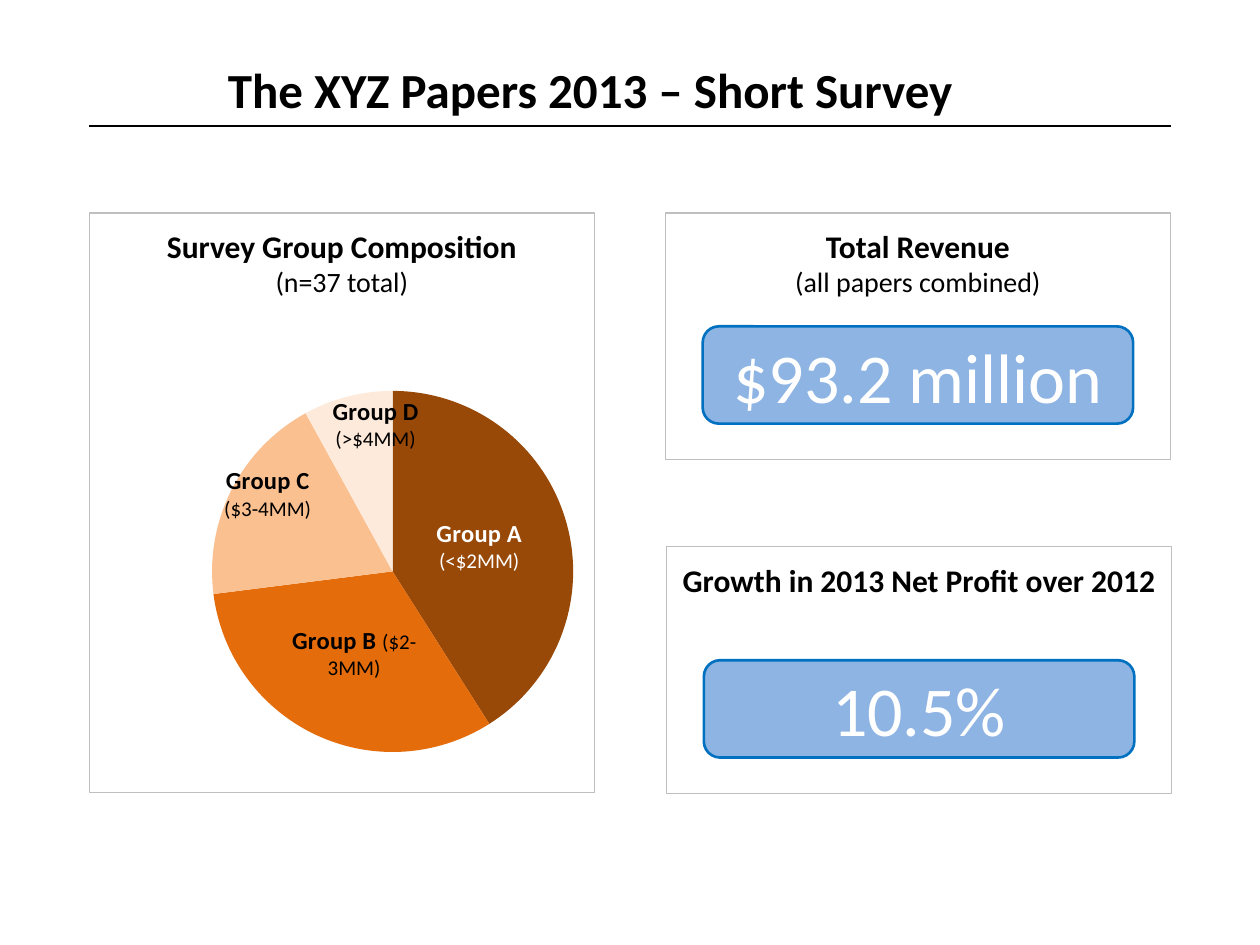
from dataclasses import dataclass

import lxml.etree
import pptx
import pptx.chart.data
import pptx.dml.color
import pptx.enum.chart
import pptx.enum.shapes
import pptx.enum.text
import pptx.oxml
import pptx.oxml.ns
import pptx.util

Pt = pptx.util.Pt
ALIGN = pptx.enum.text.PP_ALIGN
ANCHOR = pptx.enum.text.MSO_ANCHOR
SHAPE = pptx.enum.shapes.MSO_SHAPE

FONT = "Calibri"
COLORS = {
    "text": "000000", "light": "FFFFFF", "border": "BFBFBF",
    "figure": "8EB4E3", "figure_line": "0070C0",
    "a": "984807", "b": "E46C0A", "c": "FAC090", "d": "FDEADA",
}
PANEL_W = 288.7


@dataclass
class Panel:
    left: float
    top: float
    height: float
    heading: str
    note: str = ""
    figure: str = ""
    heading_w: float = 228


@dataclass
class Slice:
    group: str
    revenue: str
    value: int
    fill: str
    font: str = "text"
    shift: tuple[float, float] | None = None  # fractions of the chart size
    two_lines: bool = True


PANELS = [
    Panel(51, 121.7, 331.2, "Survey Group Composition", "(n=37 total)"),
    Panel(380.2, 121.7, 141.1, "Total Revenue", "(all papers combined)", "$93.2 million"),
    Panel(380.9, 312.5, 141.1, "Growth in 2013 Net Profit over 2012",
          figure="10.5%", heading_w=288),
]
SLICES = [
    Slice("Group A", "(<$2MM)", 41, "a", font="light"),
    Slice("Group B", "($2-3MM)", 32, "b", two_lines=False),
    Slice("Group C", "($3-4MM)", 19, "c", shift=(-0.08, -0.08)),
    Slice("Group D", "(>$4MM)", 8, "d", shift=(0.01, -0.13)),
]


def rgb(name: str) -> pptx.dml.color.RGBColor:
    return pptx.dml.color.RGBColor.from_string(COLORS[name])


def add_text(p, text: str, *, size: float, color: str = "text",
             bold: bool = False, align=None) -> None:
    r = p.add_run()
    r.text = text
    r.font.name, r.font.size, r.font.bold = FONT, Pt(size), bold
    r.font.color.rgb = rgb(color)
    if align is not None:
        p.alignment = align


def add_box(s, kind, left: float, top: float, width: float, height: float,
            line: str, weight: float, fill: str | None = None):
    sp = s.shapes.add_shape(kind, Pt(left), Pt(top), Pt(width), Pt(height))
    sp.shadow.inherit = False
    sp.line.color.rgb = rgb(line)
    sp.line.width = Pt(weight)
    if fill:
        sp.fill.solid()
        sp.fill.fore_color.rgb = rgb(fill)
    else:
        sp.fill.background()
    return sp


def manual_layout(**values) -> lxml.etree._Element:
    """Chart layout element; values are given in schema order."""
    layout = pptx.oxml.parse_xml(
        f"<c:layout {pptx.oxml.ns.nsdecls('c')}><c:manualLayout/></c:layout>")
    for tag, value in values.items():
        lxml.etree.SubElement(layout[0], pptx.oxml.ns.qn(f"c:{tag}")).set("val", str(value))
    return layout


def add_title(s, text: str) -> None:
    sp = s.shapes.title
    sp.left, sp.top, sp.width, sp.height = Pt(123), Pt(30.2), Pt(533), Pt(41.8)
    sp.text_frame.vertical_anchor = ANCHOR.MIDDLE
    add_text(sp.text_frame.paragraphs[0], text, size=28, bold=True, align=ALIGN.LEFT)
    rule = s.shapes.add_connector(
        pptx.enum.shapes.MSO_CONNECTOR.STRAIGHT, Pt(50.8), Pt(72), Pt(669.3), Pt(72))
    rule.line.color.rgb = rgb("text")
    rule.line.width = Pt(0.75)
    lxml.etree.SubElement(rule._element.spPr, pptx.oxml.ns.qn("a:effectLst"))


def add_panel(s, panel: Panel) -> None:
    center = panel.left + PANEL_W / 2
    heading = s.shapes.add_textbox(Pt(center - panel.heading_w / 2), Pt(panel.top + 4.3),
                                   Pt(panel.heading_w), Pt(48.5))
    tf = heading.text_frame
    tf.word_wrap = True
    add_text(tf.paragraphs[0], panel.heading, size=18, bold=True, align=ALIGN.CENTER)
    if panel.note:
        add_text(tf.add_paragraph(), panel.note, size=16, align=ALIGN.CENTER)
    add_box(s, SHAPE.RECTANGLE, panel.left, panel.top, PANEL_W, panel.height, "border", 0.75)
    if panel.figure:
        sp = add_box(s, SHAPE.ROUNDED_RECTANGLE, center - 123, panel.top + 64.8, 246, 55.6,
                     "figure_line", 1.5, "figure")
        sp.text_frame.vertical_anchor = ANCHOR.MIDDLE
        add_text(sp.text_frame.paragraphs[0], panel.figure, size=40, color="light",
                 align=ALIGN.CENTER)


def add_label(point, part: Slice) -> None:
    label = point.data_label
    p = label.text_frame.paragraphs[0]
    add_text(p, part.group if part.two_lines else part.group + " ",
             size=14, color=part.font, bold=True)
    if part.two_lines:
        p = label.text_frame.add_paragraph()
    add_text(p, part.revenue, size=12, color=part.font)
    label.position = pptx.enum.chart.XL_LABEL_POSITION.CENTER
    if part.shift:
        x, y = part.shift
        rich = label.text_frame._txBody
        rich.getparent().addprevious(manual_layout(x=x, y=y))


def add_pie(s) -> None:
    data = pptx.chart.data.CategoryChartData()
    data.categories = [f"{part.group} {part.revenue}" for part in SLICES]
    data.add_series("Series 1", [part.value for part in SLICES])
    chart = s.shapes.add_chart(pptx.enum.chart.XL_CHART_TYPE.PIE, Pt(41.8), Pt(178.6),
                               Pt(317.5), Pt(262), data).chart
    chart.has_legend = chart.has_title = False
    chart.font.name, chart.font.size = FONT, Pt(18)
    chart.font.color.rgb = rgb("text")
    plot = chart.plots[0]
    plot.vary_by_categories = True
    area = chart._chartSpace.chart.plotArea
    for old in area.findall(pptx.oxml.ns.qn("c:layout")):
        area.remove(old)
    area.insert(0, manual_layout(layoutTarget="inner", xMode="edge", yMode="edge",
                                 x=0.25, y=0.17, w=0.65, h=0.79))
    labels = plot.series[0].data_labels
    labels.show_category_name, labels.show_value = True, False
    labels.position = pptx.enum.chart.XL_LABEL_POSITION.CENTER
    labels.font.size = Pt(14)
    for i, part in enumerate(SLICES):
        point = plot.series[0].points[i]
        point.format.fill.solid()
        point.format.fill.fore_color.rgb = rgb(part.fill)
        add_label(point, part)


def main() -> None:
    prs = pptx.Presentation()
    prs.slide_width, prs.slide_height = Pt(720), Pt(540)
    s = prs.slides.add_slide(prs.slide_layouts[5])
    add_title(s, "The XYZ Papers 2013 – Short Survey")
    add_pie(s)
    for panel in PANELS:
        add_panel(s, panel)
    prs.save("out.pptx")


if __name__ == "__main__":
    main()
